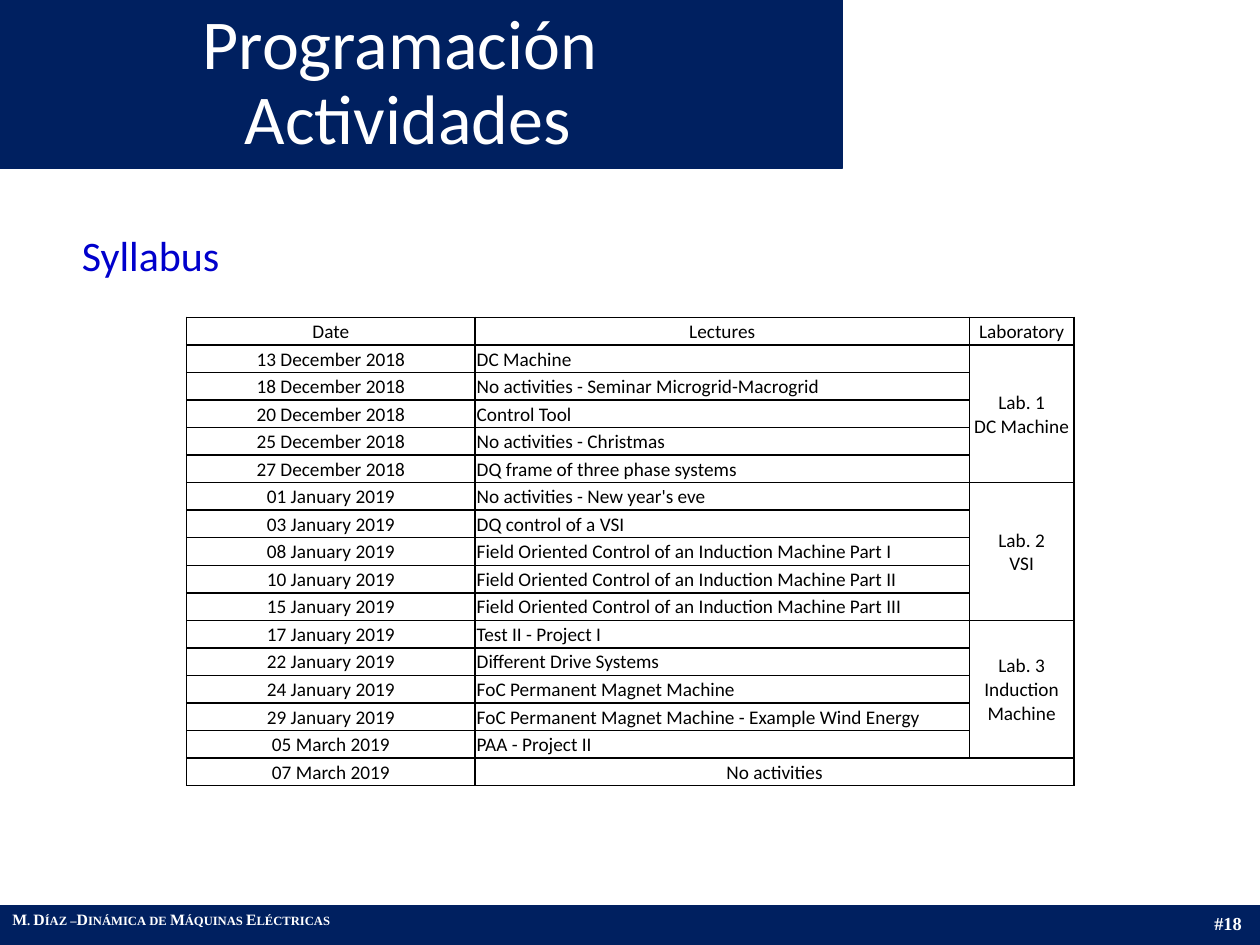
import pptx
import pptx.dml.color
import pptx.enum.shapes
import pptx.enum.text
import pptx.oxml
import pptx.oxml.ns
import pptx.util

Cm = pptx.util.Cm
Pt = pptx.util.Pt
ALIGN = pptx.enum.text.PP_ALIGN
MIDDLE = pptx.enum.text.MSO_ANCHOR.MIDDLE
NAVY, WHITE, BLUE, BLACK = "002060", "FFFFFF", "0000CC", "000000"


def color(hex_string):
    return pptx.dml.color.RGBColor.from_string(hex_string)


def write(frame, text, size=11, font="Calibri", ink=BLACK, bold=False,
          align=ALIGN.LEFT, spacing=None, after=None, small_caps=False):
    para = frame.paragraphs[0]
    para.text = text
    para.alignment = align
    para.line_spacing = spacing
    para.space_after = after
    for span in para.runs:
        span.font.size = Pt(size)
        span.font.name = font
        span.font.bold = bold
        span.font.color.rgb = color(ink)
        if small_caps:
            span.font._element.set("cap", "small")


deck = pptx.Presentation()
deck.slide_width, deck.slide_height = Cm(25.4), Cm(19.05)
page = deck.slides.add_slide(deck.slide_layouts[5])

for top, width, height in [(0, 16.97, 3.4), (18.26, 25.4, 0.79)]:
    bar = page.shapes.add_shape(pptx.enum.shapes.MSO_SHAPE.RECTANGLE,
                                0, Cm(top), Cm(width), Cm(height))
    bar.shadow.inherit = False
    bar.fill.solid()
    bar.fill.fore_color.rgb = color(NAVY)
    bar.line.color.rgb = color(NAVY)
    bar.line.width = Pt(1)

footer_format = dict(font="Times New Roman", ink=WHITE, bold=True)
boxes = [
    ("M. Díaz –Dinámica de Máquinas Eléctricas", (0, 18.21, 7.59, 0.64), False,
     dict(footer_format, size=9, small_caps=True)),
    ("#18", (24.23, 18.26, 1.47, 0.71), False, dict(footer_format, size=10.5)),
    ("Syllabus", (1.4, 4.37, 19.91, 1.37), True,
     dict(size=24, ink=BLUE, align=ALIGN.JUSTIFY, spacing=1.14, after=Pt(3))),
]
for text, place, wrap, text_format in boxes:
    box = page.shapes.add_textbox(*[Cm(length) for length in place])
    box.text_frame.word_wrap = wrap
    write(box.text_frame, text, **text_format)

title = page.shapes.title
title.left, title.top, title.width, title.height = Cm(0.13), Cm(0), Cm(16.18), Cm(3.4)
title.text_frame.vertical_anchor = MIDDLE
write(title.text_frame, "Programación \vActividades", size=40, ink=WHITE,
      align=ALIGN.CENTER, spacing=0.9)
page.shapes._spTree.append(title._element)

rows = [
    ("Date", "Lectures"),
    ("13 December 2018", "DC Machine"),
    ("18 December 2018", "No activities - Seminar Microgrid-Macrogrid"),
    ("20 December 2018", "Control Tool"),
    ("25 December 2018", "No activities - Christmas"),
    ("27 December 2018", "DQ frame of three phase systems"),
    ("01 January 2019", "No activities - New year's eve"),
    ("03 January 2019", "DQ control of a VSI"),
    ("08 January 2019", "Field Oriented Control of an Induction Machine Part I"),
    ("10 January 2019", "Field Oriented Control of an Induction Machine Part II"),
    ("15 January 2019", "Field Oriented Control of an Induction Machine Part III"),
    ("17 January 2019", "Test II - Project I"),
    ("22 January 2019", "Different Drive Systems"),
    ("24 January 2019", "FoC Permanent Magnet Machine"),
    ("29 January 2019", "FoC Permanent Magnet Machine - Example Wind Energy"),
    ("05 March 2019", "PAA - Project II"),
    ("07 March 2019", "No activities"),
]
laboratories = {0: "Laboratory", 1: "Lab. 1\vDC Machine", 6: "Lab. 2\vVSI",
                11: "Lab. 3\vInduction Machine"}
last = len(rows) - 1

table = page.shapes.add_table(len(rows), 3, Cm(3.76), Cm(6.4), Cm(17.89), Cm(9.45)).table
table.first_row = table.horz_banding = False
for column, width in zip(table.columns, (5.82, 9.96, 2.11)):
    column.width = Cm(width)

for index, (date, lecture) in enumerate(rows):
    table.rows[index].height = Cm(9.45 / len(rows))
    for position, text in enumerate((date, lecture, laboratories.get(index, ""))):
        cell = table.cell(index, position)
        cell.vertical_anchor = MIDDLE
        cell.margin_left = cell.margin_top = cell.margin_right = Cm(0.03)
        cell.margin_bottom = 0
        left_aligned = position == 1 and 0 < index < last
        write(cell.text_frame, text, align=ALIGN.LEFT if left_aligned else ALIGN.CENTER)
        for side in ("lnL", "lnR", "lnT", "lnB"):
            cell._tc.get_or_add_tcPr().append(pptx.oxml.parse_xml(
                f'<a:{side} {pptx.oxml.ns.nsdecls("a")} w="12700"><a:solidFill>'
                f'<a:srgbClr val="{BLACK}"/></a:solidFill></a:{side}>'))
        cell.fill.solid()
        cell.fill.fore_color.rgb = color(WHITE)

for first in (1, 6, 11):
    table.cell(first, 2).merge(table.cell(first + 4, 2))
table.cell(last, 1).merge(table.cell(last, 2))

deck.save("out.pptx")
